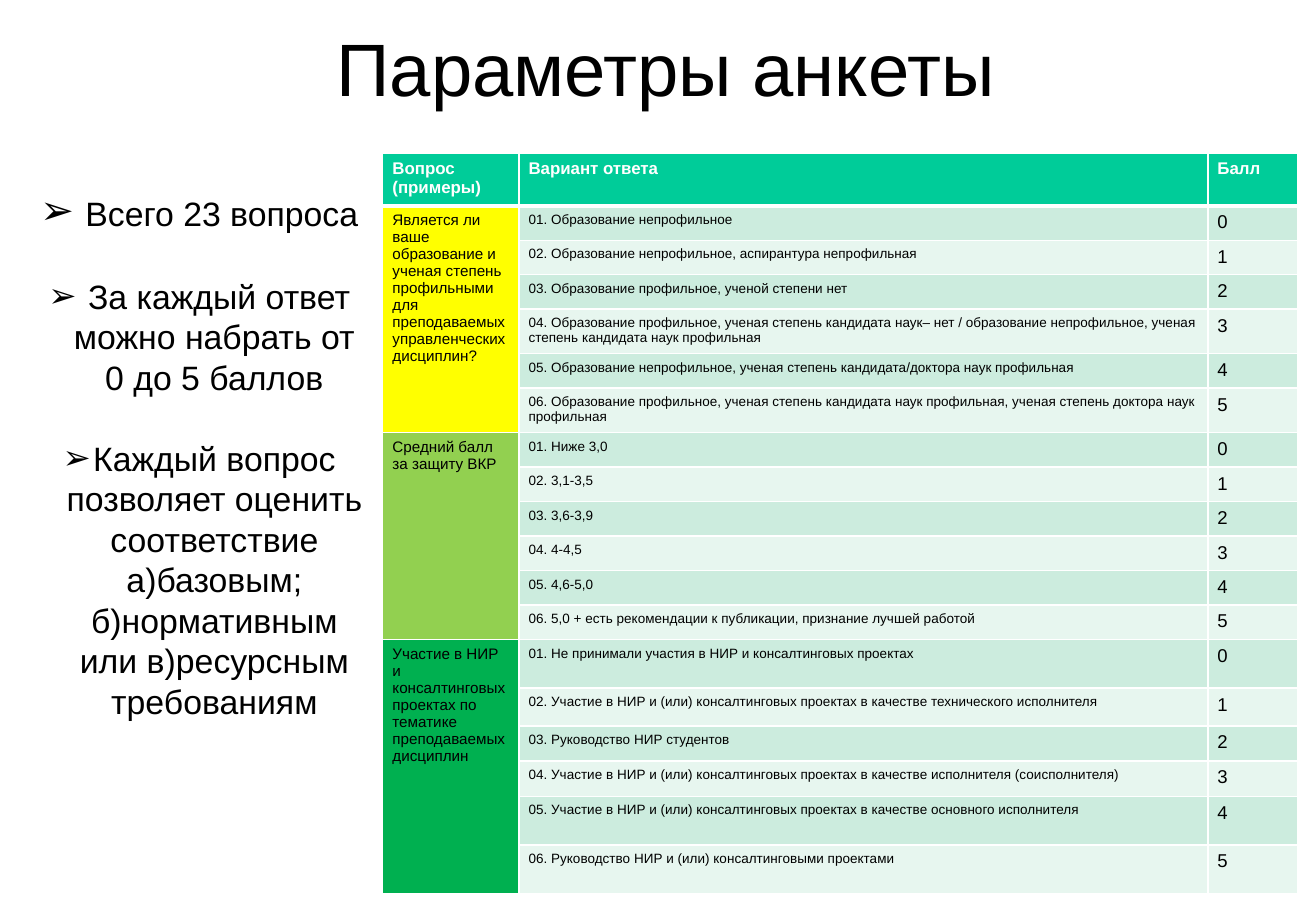
from dataclasses import dataclass

from lxml import etree
from pptx import Presentation
from pptx import util as u
from pptx.dml.color import RGBColor
from pptx.enum import text
from pptx.oxml import ns

FONT = "Arial"
COLORS = {
    "black": "000000",
    "white": "FFFFFF",
    "header": "00CC99",
    "yellow": "FFFF00",
    "lime": "92D050",
    "green": "00B050",
    "band_dark": "CCECDE",
    "band_light": "E7F6EF",
}


@dataclass
class Question:
    wording: str
    color: str
    answers: list[str]
    heights: list[float]


@dataclass
class CellStyle:
    size: float
    fill: str
    color: str = "black"
    bold: bool = False


HEADERS = ["Вопрос (примеры)", "Вариант ответа", "Балл"]
COLUMN_WIDTHS = [1.12, 5.67, 0.74]
HEADER_HEIGHT = 0.43
EVEN_HEIGHTS = [0.28] * 6

QUESTIONS = [
    Question(
        "Является ли ваше образование и ученая степень профильными для "
        "преподаваемых управленческих дисциплин?",
        "yellow",
        [
            "Образование непрофильное",
            "Образование непрофильное, аспирантура непрофильная",
            "Образование профильное, ученой степени нет",
            "Образование профильное, ученая степень кандидата наук– нет / "
            "образование непрофильное, ученая степень кандидата наук профильная",
            "Образование непрофильное, ученая степень кандидата/доктора наук профильная",
            "Образование профильное, ученая степень кандидата наук профильная, "
            "ученая степень доктора наук профильная",
        ],
        EVEN_HEIGHTS,
    ),
    Question(
        "Средний балл за защиту ВКР",
        "lime",
        [
            "Ниже 3,0",
            "3,1-3,5",
            "3,6-3,9",
            "4-4,5",
            "4,6-5,0",
            "5,0 + есть рекомендации к публикации, признание лучшей работой",
        ],
        EVEN_HEIGHTS,
    ),
    Question(
        "Участие в НИР и консалтинговых проектах по тематике преподаваемых дисциплин",
        "green",
        [
            "Не принимали участия в НИР и консалтинговых проектах",
            "Участие в НИР и (или) консалтинговых проектах в качестве технического исполнителя",
            "Руководство НИР студентов",
            "Участие в НИР и (или) консалтинговых проектах в качестве исполнителя (соисполнителя)",
            "Участие в НИР и (или) консалтинговых проектах в качестве основного исполнителя",
            "Руководство НИР и (или) консалтинговыми проектами",
        ],
        [0.4, 0.31, 0.29, 0.29, 0.4, 0.4],
    ),
]

# Each bullet is a list of (text, size) runs
BULLETS = [
    [(" ", 24), ("Всего 23 вопроса", 20)],
    [(" За каждый ответ можно набрать от 0 до 5 баллов", 20)],
    [("Каждый вопрос позволяет оценить соответствие а)базовым; "
      "б)нормативным или в)ресурсным требованиям", 20)],
]


def rgb(name: str) -> RGBColor:
    return RGBColor.from_string(COLORS[name])


def set_font(paragraph, size: float, color: str = "black", bold: bool = False) -> None:
    font = paragraph.font
    font.name, font.size, font.bold = FONT, u.Pt(size), bold
    font.color.rgb = rgb(color)


def add_title(slide, wording: str) -> None:
    box = slide.shapes.add_textbox(u.Inches(0.81), 0, u.Inches(9.34), u.Inches(1.1))
    frame = box.text_frame
    frame.word_wrap = True
    frame.vertical_anchor = text.MSO_ANCHOR.MIDDLE
    paragraph = frame.paragraphs[0]
    paragraph.text = wording
    paragraph.alignment = text.PP_ALIGN.CENTER
    set_font(paragraph, 44)


def add_bullet_mark(paragraph) -> None:
    properties = paragraph._p.get_or_add_pPr()
    properties.set("marL", str(u.Inches(0.25)))
    properties.set("indent", str(-u.Inches(0.25)))
    etree.SubElement(properties, ns.qn("a:buFont"), typeface=FONT)
    etree.SubElement(properties, ns.qn("a:buChar"), char="➢")


def add_bullets(slide) -> None:
    box = slide.shapes.add_textbox(
        u.Inches(0.19), u.Inches(1.47), u.Inches(2.9), u.Inches(5.35))
    frame = box.text_frame
    frame.word_wrap = True
    frame.margin_top = u.Inches(0.13)
    for index, runs in enumerate(BULLETS):
        paragraph = frame.add_paragraph() if index else frame.paragraphs[0]
        add_bullet_mark(paragraph)
        paragraph.alignment = text.PP_ALIGN.CENTER
        paragraph.line_spacing = u.Pt(24)
        if index:
            paragraph.space_before = u.Pt(24)
        set_font(paragraph, 20)
        for wording, size in runs:
            run = paragraph.add_run()
            run.text = wording
            run.font.size = u.Pt(size)


def set_borders(cell, top: float, bottom: float) -> None:
    properties = cell._tc.get_or_add_tcPr()
    widths = {"lnL": 1, "lnR": 1, "lnT": top, "lnB": bottom}
    for position, (side, width) in enumerate(widths.items()):
        line = etree.Element(ns.qn(f"a:{side}"), w=str(u.Pt(width)))
        fill = etree.SubElement(line, ns.qn("a:solidFill"))
        etree.SubElement(fill, ns.qn("a:srgbClr"), val=COLORS["white"])
        properties.insert(position, line)


def fill_cell(cell, wording: str, style: CellStyle) -> None:
    cell.margin_left = cell.margin_right = u.Inches(0.08)
    cell.margin_top = cell.margin_bottom = u.Inches(0.05)
    cell.fill.solid()
    cell.fill.fore_color.rgb = rgb(style.fill)
    paragraph = cell.text_frame.paragraphs[0]
    paragraph.text = wording
    paragraph.alignment = text.PP_ALIGN.LEFT
    set_font(paragraph, style.size, style.color, style.bold)


def add_survey_table(slide) -> None:
    heights = [HEADER_HEIGHT] + [h for question in QUESTIONS for h in question.heights]
    table = slide.shapes.add_table(
        len(heights), len(HEADERS), u.Inches(3.15), u.Inches(1.26),
        u.Inches(sum(COLUMN_WIDTHS)), u.Inches(sum(heights))).table
    for column, width in zip(table.columns, COLUMN_WIDTHS):
        column.width = u.Inches(width)
    for row, height in zip(table.rows, heights):
        row.height = u.Inches(height)

    # Header row
    for column, wording in enumerate(HEADERS):
        fill_cell(table.cell(0, column), wording, CellStyle(10, "header", "white", True))

    # One merged question cell per block of answers
    first = 1
    for question in QUESTIONS:
        last = first + len(question.answers) - 1
        table.cell(first, 0).merge(table.cell(last, 0))
        for score, answer in enumerate(question.answers):
            row = first + score
            band = "band_light" if score % 2 else "band_dark"
            fill_cell(table.cell(row, 0), "" if score else question.wording,
                      CellStyle(9, question.color))
            fill_cell(table.cell(row, 1), f"{score + 1:02}. {answer}", CellStyle(8, band))
            fill_cell(table.cell(row, 2), str(score), CellStyle(11, band))
        first = last + 1

    # White grid with a thick line under the header
    for row in range(len(heights)):
        for column in range(len(HEADERS)):
            set_borders(table.cell(row, column),
                        top=3 if row == 1 else 1, bottom=3 if row == 0 else 1)


def main() -> None:
    presentation = Presentation()
    presentation.slide_width = u.Inches(10.83)
    presentation.slide_height = u.Inches(7.5)
    slide = presentation.slides.add_slide(presentation.slide_layouts[6])
    add_title(slide, "Параметры анкеты")
    add_bullets(slide)
    add_survey_table(slide)
    presentation.save("out.pptx")


if __name__ == "__main__":
    main()
